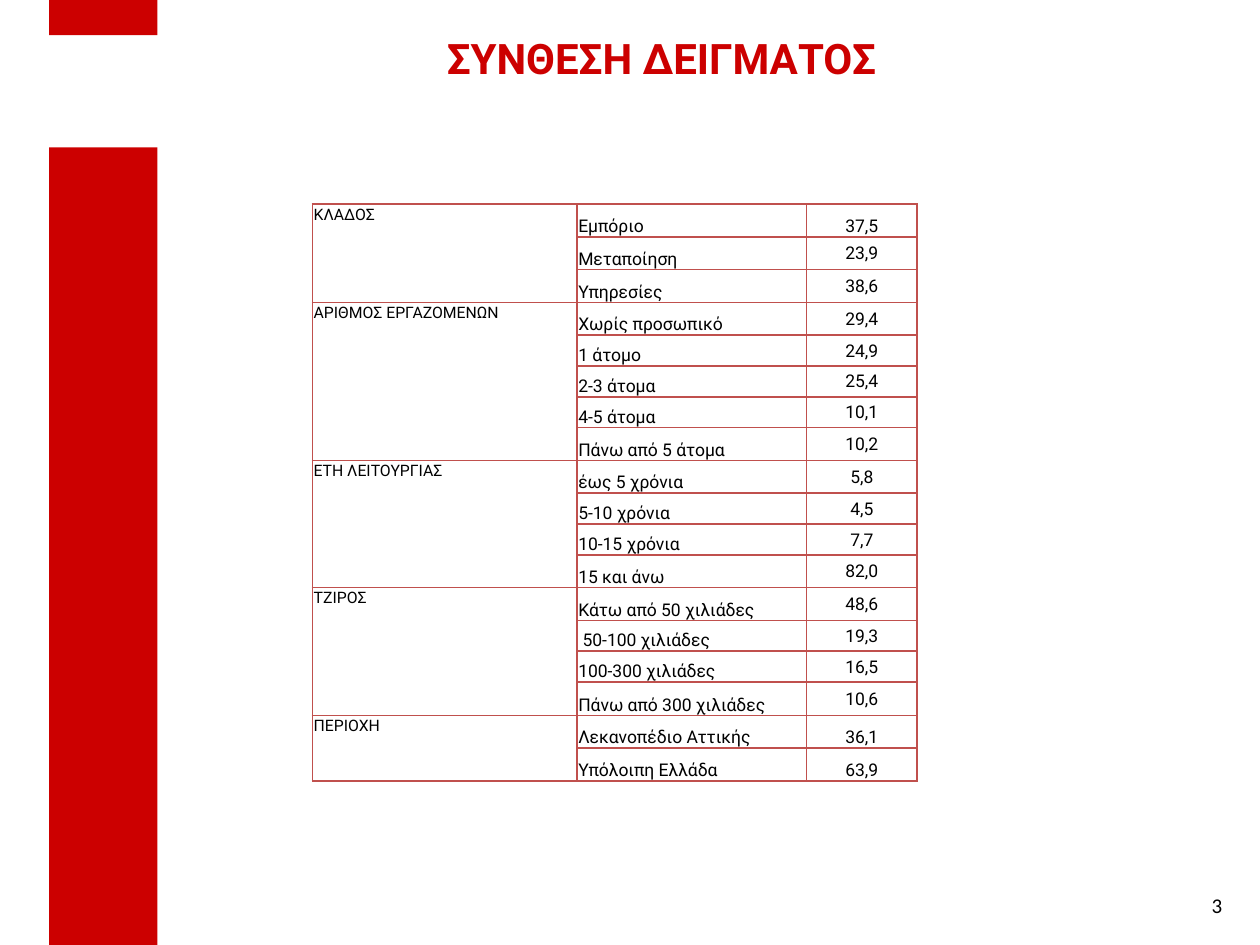
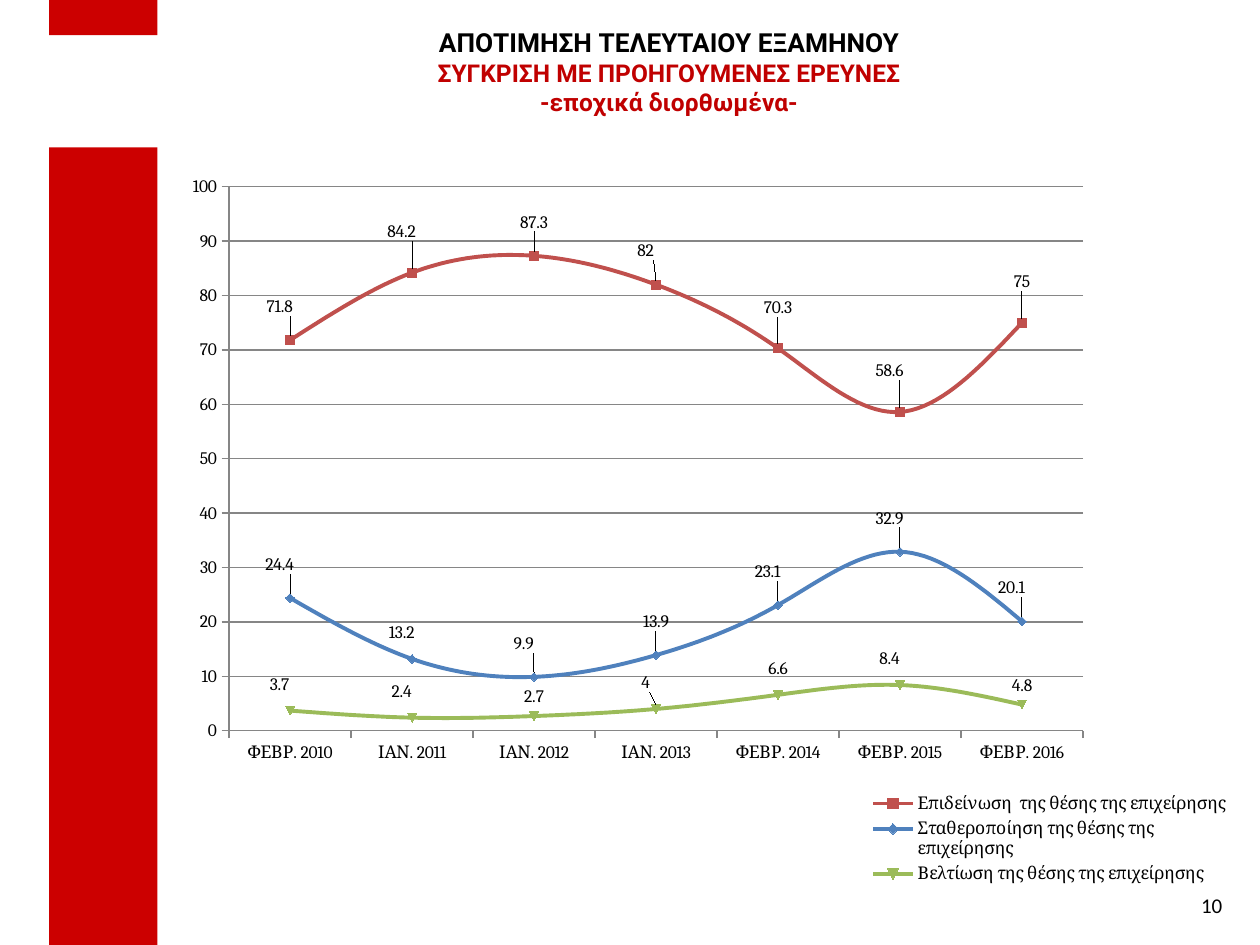
from dataclasses import dataclass
from typing import NamedTuple

from lxml import etree
from pptx import Presentation
from pptx import util as u
from pptx.chart import data as cd
from pptx.dml import color
from pptx.enum import chart as ec, shapes, text
from pptx.oxml import ns

Inches, Pt = u.Inches, u.Pt


@dataclass(frozen=True)
class Theme:
    red: str = "CC0000"
    deep: str = "C00000"
    black: str = "000000"
    brick: str = "C0504D"
    blue: str = "4F81BD"
    green: str = "9BBB59"
    gray: str = "868686"
    sans: str = "Roboto"
    serif: str = "Cambria"
    page: str = "Calibri"
    head: int = 24
    lead: int = 15
    sub: int = 14
    num: int = 12
    body: int = 10
    group: int = 9


T = Theme()


class Box(NamedTuple):
    x: float
    y: float
    w: float
    h: float

    def emu(self) -> list:
        return [Inches(v) for v in self]


class Line(NamedTuple):
    text: str
    size: int
    hue: str


class Group(NamedTuple):
    name: str
    rows: list


class Curve(NamedTuple):
    name: str
    hue: str
    vals: list
    shifts: list  # label offsets, as shares of the chart size


# Shared content
BANDS = [Box(0.39, 1.17, 0.86, 6.33), Box(0.39, 0, 0.86, 0.28)]
PAGE = Box(7.47, 6.83, 2.33, 0.5)

# Sample table
COLS = [2.1, 1.82, 0.88]
TALL, SHORT, LAST = 0.26, 0.245, 0.265
GROUPS = [
    Group("ΚΛΑΔΟΣ", [("Εμπόριο", "37,5"), ("Μεταποίηση", "23,9"),
                     ("Υπηρεσίες", "38,6")]),
    Group("ΑΡΙΘΜΟΣ ΕΡΓΑΖΟΜΕΝΩΝ", [
        ("Χωρίς προσωπικό", "29,4"), ("1 άτομο", "24,9"), ("2-3 άτομα", "25,4"),
        ("4-5 άτομα", "10,1"), ("Πάνω από 5 άτομα", "10,2")]),
    Group("ΕΤΗ ΛΕΙΤΟΥΡΓΙΑΣ", [
        ("έως 5 χρόνια", "5,8"), ("5-10 χρόνια", "4,5"),
        ("10-15 χρόνια", "7,7"), ("15 και άνω", "82,0")]),
    Group("ΤΖΙΡΟΣ", [
        ("Κάτω από 50 χιλιάδες", "48,6"), (" 50-100 χιλιάδες", "19,3"),
        ("100-300 χιλιάδες", "16,5"), ("Πάνω από 300 χιλιάδες", "10,6")]),
    Group("ΠΕΡΙΟΧΗ", [("Λεκανοπέδιο Αττικής", "36,1"),
                      ("Υπόλοιπη Ελλάδα", "63,9")]),
]
ROWS = [TALL] * 4 + [SHORT] * 3 + [TALL] * 2 + [SHORT] * 2 + [TALL] * 2 \
    + [SHORT] * 2 + [LAST] + [TALL] * 2
LOW = (0, 16, 17)  # rows whose value sits at the bottom

# Survey chart
CATS = ["ΦΕΒΡ. 2010", "ΙΑΝ. 2011", "ΙΑΝ. 2012", "ΙΑΝ. 2013",
        "ΦΕΒΡ. 2014", "ΦΕΒΡ. 2015", "ΦΕΒΡ. 2016"]
CURVES = [
    Curve("Επιδείνωση  της θέσης της επιχείρησης", T.brick,
          [71.8, 84.2, 87.3, 82, 70.3, 58.6, 75],
          [(-0.01, -0.02), (-0.01, -0.03), (0, -0.02), (-0.01, -0.02),
           (0, -0.03), (-0.01, -0.03), (0, -0.03)]),
    Curve("Σταθεροποίηση της θέσης της επιχείρησης", T.blue,
          [24.4, 13.2, 9.9, 13.9, 23.1, 32.9, 20.1],
          [(-0.01, -0.02), (-0.01, -0.01), (-0.01, -0.02), (0, -0.02),
           (-0.01, -0.02), (-0.01, -0.02), (-0.01, -0.02)]),
    Curve("Βελτίωση της θέσης της επιχείρησης", T.green,
          [3.7, 2.4, 2.7, 4, 6.6, 8.4, 4.8],
          [(-0.01, -0.01), (-0.01, -0.01), (0, 0), (-0.01, -0.01),
           (0, -0.01), (-0.01, -0.01), (0, 0)]),
]


def rgb(hue: str) -> color.RGBColor:
    return color.RGBColor.from_string(hue)


def add_run(para, words: str, face: str, size: int, hue: str = T.black,
            bold: bool = False) -> None:
    run = para.add_run()
    run.text = words
    font = run.font
    font.name, font.size, font.bold = face, Pt(size), bold
    font.color.rgb = rgb(hue)


def add_box(slide, box: Box, anchor, align):
    frame = slide.shapes.add_textbox(*box.emu()).text_frame
    frame.word_wrap = True
    frame.vertical_anchor = anchor
    para = frame.paragraphs[0]
    para.alignment = align
    return para


def add_page(deck, num: int, box: Box, lines: list):
    """Add a slide with its bands, title and number."""
    slide = deck.slides.add_slide(deck.slide_layouts[6])
    for band in BANDS:
        bar = slide.shapes.add_shape(shapes.MSO_SHAPE.RECTANGLE, *band.emu())
        bar.shadow.inherit = False
        bar.fill.solid()
        bar.fill.fore_color.rgb = rgb(T.red)
        bar.line.fill.background()
    para = add_box(slide, box, text.MSO_ANCHOR.TOP, text.PP_ALIGN.CENTER)
    for i, line in enumerate(lines):
        if i:
            para.add_line_break()
        add_run(para, line.text, T.sans, line.size, line.hue, True)
    para = add_box(slide, PAGE, text.MSO_ANCHOR.BOTTOM, text.PP_ALIGN.RIGHT)
    add_run(para, str(num), T.page, T.num)
    return slide


def style_cell(cell) -> None:
    cell.margin_left = cell.margin_right = cell.margin_top = Inches(0.01)
    cell.margin_bottom = 0
    cell.fill.background()
    props = cell._tc.get_or_add_tcPr()
    for i, side in enumerate(("lnL", "lnR", "lnT", "lnB")):
        edge = etree.Element(ns.qn(f"a:{side}"), w=str(Pt(1)))
        fill = etree.SubElement(edge, ns.qn("a:solidFill"))
        etree.SubElement(fill, ns.qn("a:srgbClr"), val=T.brick)
        props.insert(i, edge)


def fill_cell(cell, words: str, size: int, anchor, align) -> None:
    cell.vertical_anchor = anchor
    para = cell.text_frame.paragraphs[0]
    para.alignment = align
    add_run(para, words, T.sans, size)


def add_grid(slide) -> None:
    box = Box(2.48, 1.62, sum(COLS), sum(ROWS))
    grid = slide.shapes.add_table(len(ROWS), len(COLS), *box.emu()).table
    grid.first_row = grid.horz_banding = False
    for col, wide in zip(grid.columns, COLS):
        col.width = Inches(wide)
    for row, high in zip(grid.rows, ROWS):
        row.height = Inches(high)
    for cell in grid.iter_cells():
        style_cell(cell)
    anchor, align = text.MSO_ANCHOR, text.PP_ALIGN
    top = 0
    for group in GROUPS:
        end = top + len(group.rows)
        grid.cell(top, 0).merge(grid.cell(end - 1, 0))
        fill_cell(grid.cell(top, 0), group.name, T.group, anchor.TOP, align.LEFT)
        for r, (label, value) in enumerate(group.rows, top):
            fill_cell(grid.cell(r, 1), label, T.body, anchor.BOTTOM, align.LEFT)
            fill_cell(grid.cell(r, 2), value, T.body,
                      anchor.BOTTOM if r in LOW else anchor.MIDDLE, align.CENTER)
        top = end


def make_layout(**vals):
    """Build a manual chart layout from its named values."""
    root = etree.Element(ns.qn("c:layout"))
    manual = etree.SubElement(root, ns.qn("c:manualLayout"))
    for key, val in vals.items():
        etree.SubElement(manual, ns.qn(f"c:{key}"), val=str(val))
    return root


def style_curve(series, curve: Curve) -> None:
    series.smooth = True
    series.format.line.width = Pt(2.25)
    series.marker.size = 5
    mark = series.marker.format
    mark.fill.solid()
    for part in (series.format.line.color, mark.fill.fore_color, mark.line.color):
        part.rgb = rgb(curve.hue)
    for i in range(len(curve.vals)):
        series.points[i].data_label.position = ec.XL_LABEL_POSITION.ABOVE
    labels = series._element.iter(ns.qn("c:dLbl"))
    for label, (x, y) in zip(labels, curve.shifts):
        label.insert(1, make_layout(x=x, y=y))


def add_plot(slide) -> None:
    data = cd.CategoryChartData()
    data.categories = CATS
    for curve in CURVES:
        data.add_series(curve.name, curve.vals)
    chart = slide.shapes.add_chart(ec.XL_CHART_TYPE.LINE_MARKERS,
                                   *Box(1.46, 1.31, 8.35, 5.75).emu(), data).chart
    chart.has_title = False
    chart.font.name, chart.font.size = T.serif, Pt(T.body)
    chart.font.color.rgb = rgb(T.black)
    plot = chart.plots[0]
    plot.vary_by_categories = False
    for series, curve in zip(plot.series, CURVES):
        style_curve(series, curve)

    # Axes
    axis = chart.value_axis
    axis.minimum_scale, axis.maximum_scale, axis.major_unit = 0, 100, 10
    axis.has_major_gridlines = True
    for part in (axis, chart.category_axis):
        part.major_tick_mark = ec.XL_TICK_MARK.OUTSIDE
        part.format.line.color.rgb = rgb(T.gray)
    axis.major_gridlines.format.line.color.rgb = rgb(T.gray)

    # Plot area and legend places
    area = chart._chartSpace.find(f".//{ns.qn('c:plotArea')}")
    old = area.find(ns.qn("c:layout"))
    if old is not None:
        area.remove(old)
    area.insert(0, make_layout(layoutTarget="inner", xMode="edge", yMode="edge",
                               x=0.043, y=0.03, w=0.814, h=0.751))
    chart.has_legend = True
    legend = chart.legend
    legend.position = ec.XL_LEGEND_POSITION.RIGHT
    legend.include_in_layout = False
    root = legend._element
    for old in root.findall(ns.qn("c:layout")):
        root.remove(old)
    root.insert(1, make_layout(xMode="edge", yMode="edge",
                               x=0.65, y=0.86, w=0.35, h=0.14))


def main() -> None:
    deck = Presentation()
    deck.slide_width, deck.slide_height = Inches(10), Inches(7.5)
    # Sample slide
    add_grid(add_page(deck, 3, Box(1.25, 0.21, 8, 0.79),
                      [Line("ΣΥΝΘΕΣΗ ΔΕΙΓΜΑΤΟΣ", T.head, T.red)]))
    # Comparison slide
    add_plot(add_page(deck, 10, Box(1.25, 0.16, 8.12, 0.74), [
        Line("ΑΠΟΤΙΜΗΣΗ ΤΕΛΕΥΤΑΙΟΥ ΕΞΑΜΗΝΟΥ", T.lead, T.black),
        Line("ΣΥΓΚΡΙΣΗ ΜΕ ΠΡΟΗΓΟΥΜΕΝΕΣ ΕΡΕΥΝΕΣ", T.sub, T.deep),
        Line("-εποχικά διορθωμένα-", T.sub, T.deep)]))
    deck.save("out.pptx")


if __name__ == "__main__":
    main()
